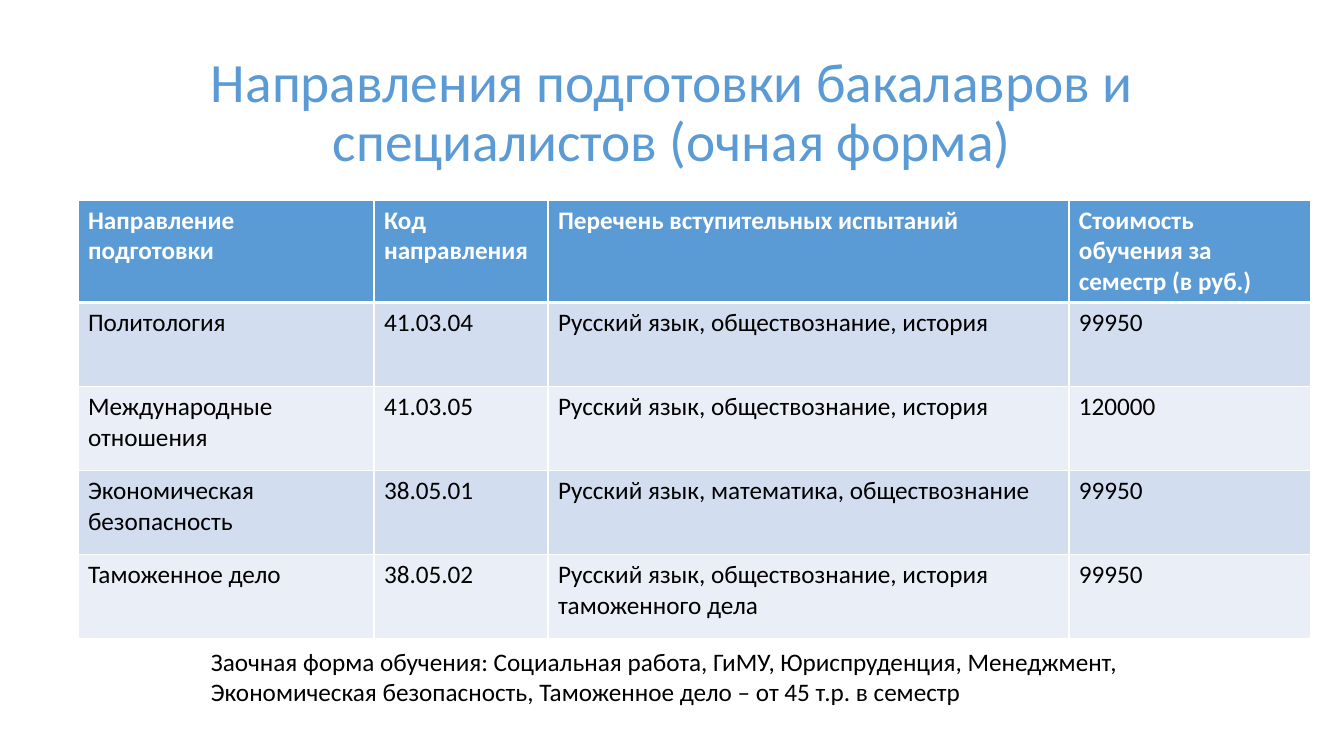
from dataclasses import dataclass

from lxml.etree import SubElement
from pptx import Presentation
from pptx.dml.color import RGBColor as Color
from pptx.enum.text import MSO_ANCHOR as Anchor, MSO_AUTO_SIZE as AutoSize, PP_ALIGN as Align
from pptx.oxml.ns import qn
from pptx.util import Pt


@dataclass(frozen=True)
class Theme:
    font: str = "Calibri"
    title_size: float = 39.6
    body_size: int = 18
    accent: str = "5B9BD5"
    dark_band: str = "D2DEEF"
    light_band: str = "EAEFF7"
    white: str = "FFFFFF"
    black: str = "000000"


THEME = Theme()
EMU_PER_PX = 914400 / 100.8


def px(*lengths):
    """Turn pixel lengths into a list of EMU."""
    return [round(length * EMU_PER_PX) for length in lengths]


def style(para, size, color, bold=False):
    font = para.font
    font.name, font.size, font.bold = THEME.font, Pt(size), bold
    font.color.rgb = Color.from_string(color)


deck = Presentation()
deck.slide_width, deck.slide_height = px(1344, 756)
page = deck.slides.add_slide(deck.slide_layouts[5])

# Title
title = page.shapes.title
title.left, title.top, title.width, title.height = px(101, 69, 1142, 90)
title_frame = title.text_frame
title_frame.text = "Направления подготовки бакалавров и специалистов (очная форма)"
title_frame.word_wrap = True
title_frame.auto_size = AutoSize.NONE
title_frame.vertical_anchor = Anchor.MIDDLE
title_para = title_frame.paragraphs[0]
title_para.alignment = Align.CENTER
title_para.line_spacing = 0.9
style(title_para, THEME.title_size, THEME.accent)

# Programme table
programmes = [
    ("Направление подготовки", "Код направления", "Перечень вступительных испытаний",
     "Стоимость обучения за семестр (в руб.)"),
    ("Политология", "41.03.04", "Русский язык, обществознание, история", "99950"),
    ("Международные отношения", "41.03.05", "Русский язык, обществознание, история", "120000"),
    ("Экономическая безопасность", "38.05.01", "Русский язык, математика, обществознание", "99950"),
    ("Таможенное дело", "38.05.02", "Русский язык, обществознание, история таможенного дела",
     "99950"),
]
column_widths = px(296, 174, 521, 242)
row_height = px(84)[0]
left, top = px(78, 200)
table = page.shapes.add_table(len(programmes), len(column_widths), left, top,
                              sum(column_widths), row_height * len(programmes)).table
for column, width in zip(table.columns, column_widths):
    column.width = width

for row_index, programme in enumerate(programmes):
    is_header = row_index == 0
    band = THEME.dark_band if row_index % 2 else THEME.light_band
    for column_index, text in enumerate(programme):
        cell = table.cell(row_index, column_index)
        cell.text = text
        style(cell.text_frame.paragraphs[0], THEME.body_size,
              THEME.white if is_header else THEME.black, is_header)
        properties = cell._tc.get_or_add_tcPr()
        for side in ("lnL", "lnR", "lnT", "lnB"):
            thick = (is_header and side == "lnB") or (row_index == 1 and side == "lnT")
            border = SubElement(properties, qn(f"a:{side}"), w=str(Pt(3 if thick else 1)))
            SubElement(SubElement(border, qn("a:solidFill")), qn("a:srgbClr"), val=THEME.white)
        cell.fill.solid()
        cell.fill.fore_color.rgb = Color.from_string(THEME.accent if is_header else band)
        # The schema wants the fill after the borders
        properties.append(properties.find(qn("a:solidFill")))

# Note on part-time study
note_frame = page.shapes.add_textbox(*px(201, 641, 943, 72)).text_frame
note_frame.word_wrap = False
note_frame.auto_size = AutoSize.SHAPE_TO_FIT_TEXT
note_frame.text = (
    "Заочная форма обучения: Социальная работа, ГиМУ, Юриспруденция, Менеджмент,\n"
    "Экономическая безопасность, Таможенное дело – от 45 т.р. в семестр"
)
for para in note_frame.paragraphs:
    style(para, THEME.body_size, THEME.black)

deck.save("out.pptx")
